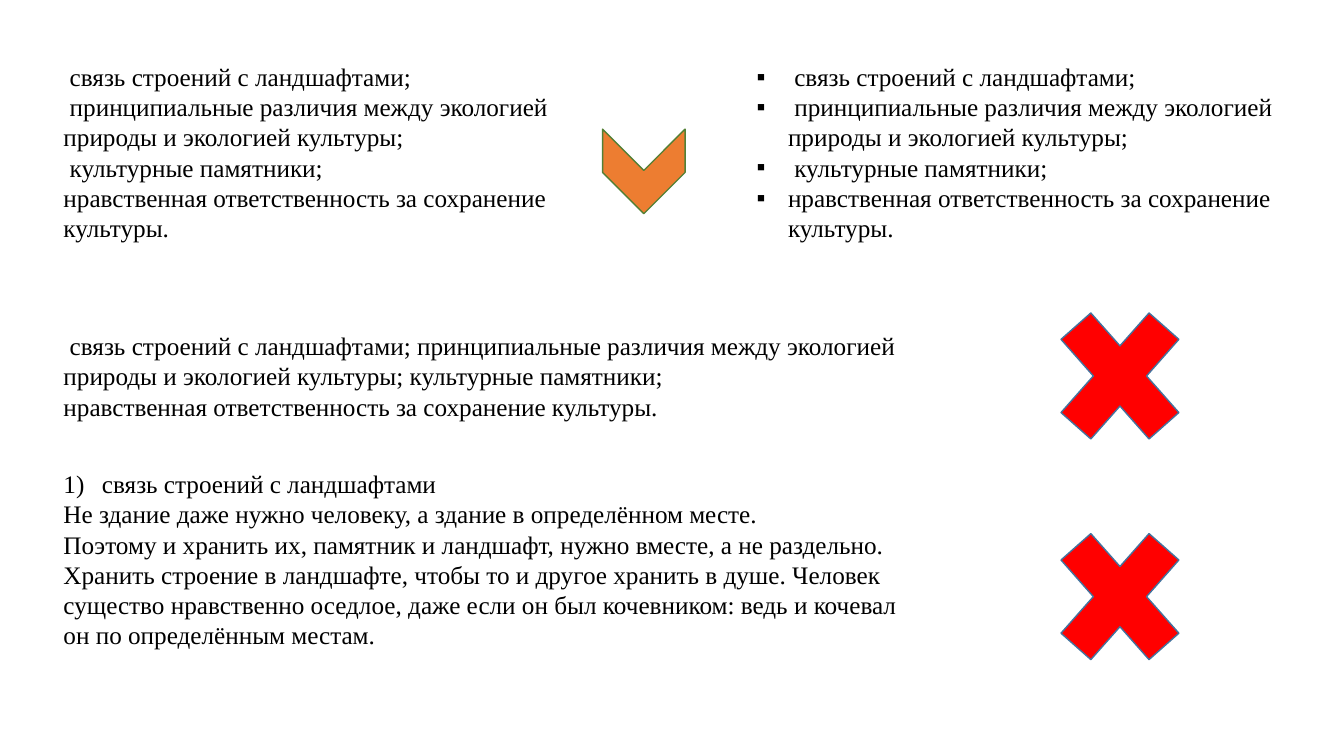
from lxml.etree import SubElement
from pptx import Presentation
from pptx.dml.color import RGBColor
from pptx.enum.shapes import MSO_SHAPE
from pptx.enum.text import MSO_AUTO_SIZE
from pptx.oxml.ns import qn
from pptx.util import Cm, Pt

LEFT = 1.35
CROSS_LEFT, CROSS_WIDTH, CROSS_HEIGHT = 26.09, 4.27, 4.83

TOPICS = [
    " связь строений с ландшафтами;",
    " принципиальные различия между экологией природы и экологией культуры;",
    " культурные памятники;",
    "нравственная ответственность за сохранение культуры.",
]
RUN_ON_TOPICS = ["".join(TOPICS[:3]), TOPICS[3]]
DETAILED_TOPIC = [
    "связь строений с ландшафтами",
    "Не здание даже нужно человеку, а здание в определённом месте.",
    "Поэтому и хранить их, памятник и ландшафт, нужно вместе, а не раздельно.",
    "Хранить строение в ландшафте, чтобы то и другое хранить в душе. Человек",
    "существо нравственно оседлое, даже если он был кочевником: ведь и кочевал",
    "он по определённым местам.",
]


def color(value):
    return RGBColor.from_string(value)


def set_marker(paragraph, indent, tag, **attributes):
    """Give the paragraph a hanging bullet or number."""
    properties = paragraph._p.get_or_add_pPr()
    properties.set("marL", str(Cm(indent)))
    properties.set("indent", str(-Cm(indent)))
    if tag == "a:buChar":
        SubElement(properties, qn("a:buFont"), typeface="Arial")
    SubElement(properties, qn(tag), **attributes)


def add_text(slide, box, lines):
    """Place a text box and return its paragraphs."""
    text_frame = slide.shapes.add_textbox(*map(Cm, box)).text_frame
    text_frame.word_wrap = True
    text_frame.auto_size = MSO_AUTO_SIZE.SHAPE_TO_FIT_TEXT
    for index, line in enumerate(lines):
        paragraph = text_frame.add_paragraph() if index else text_frame.paragraphs[0]
        run = paragraph.add_run()
        run.text = line
        run.font.name = "Times New Roman"
        run.font.size = Pt(18)
        run.font.color.rgb = color("000000")
    return text_frame.paragraphs


def add_symbol(slide, kind, box, fill, line):
    shape = slide.shapes.add_shape(kind, *map(Cm, box))
    shape.shadow.inherit = False
    shape.fill.solid()
    shape.fill.fore_color.rgb = color(fill)
    shape.line.color.rgb = color(line)
    shape.line.width = Pt(1)
    return shape


def add_list_comparison(slide, left, top, width, height):
    """Plain list, chevron and the same list with bullets."""
    column = 13.82
    add_text(slide, (left, top, column, height), TOPICS)
    bulleted = add_text(slide, (left + width - column, top, column, height), TOPICS)
    for paragraph in bulleted:
        set_marker(paragraph, 0.79, "a:buChar", char="▪")
    chevron = add_symbol(slide, MSO_SHAPE.CHEVRON,
                         (left + column - 0.01, top + 1.86, 2.13, 2.08),
                         "ED7D31", "538035")
    chevron.rotation = 90


def add_wrong_example(slide, left, top, width, height, lines, cross_offset):
    """Text of an incorrect plan with a red cross beside it."""
    paragraphs = add_text(slide, (left, top, width, height), lines)
    add_symbol(slide, MSO_SHAPE.MATH_MULTIPLY,
               (CROSS_LEFT, top + cross_offset, CROSS_WIDTH, CROSS_HEIGHT),
               "FF0000", "43739E")
    return paragraphs


def main():
    presentation = Presentation()
    presentation.slide_width = Cm(33.87)
    presentation.slide_height = Cm(19.05)
    slide = presentation.slides.add_slide(presentation.slide_layouts[6])

    # Lists compared side by side
    add_list_comparison(slide, LEFT, 1.42, 31.29, 4.88)

    # Topics run together
    add_wrong_example(slide, LEFT, 8.2, 23.42, 2.57, RUN_ON_TOPICS, -1.14)

    # Numbered topic with too much detail
    detailed = add_wrong_example(slide, LEFT, 11.68, 24.51, 4.88, DETAILED_TOPIC, 0.94)
    set_marker(detailed[0], 0.97, "a:buAutoNum", type="arabicParenR")

    presentation.save("out.pptx")


if __name__ == "__main__":
    main()
